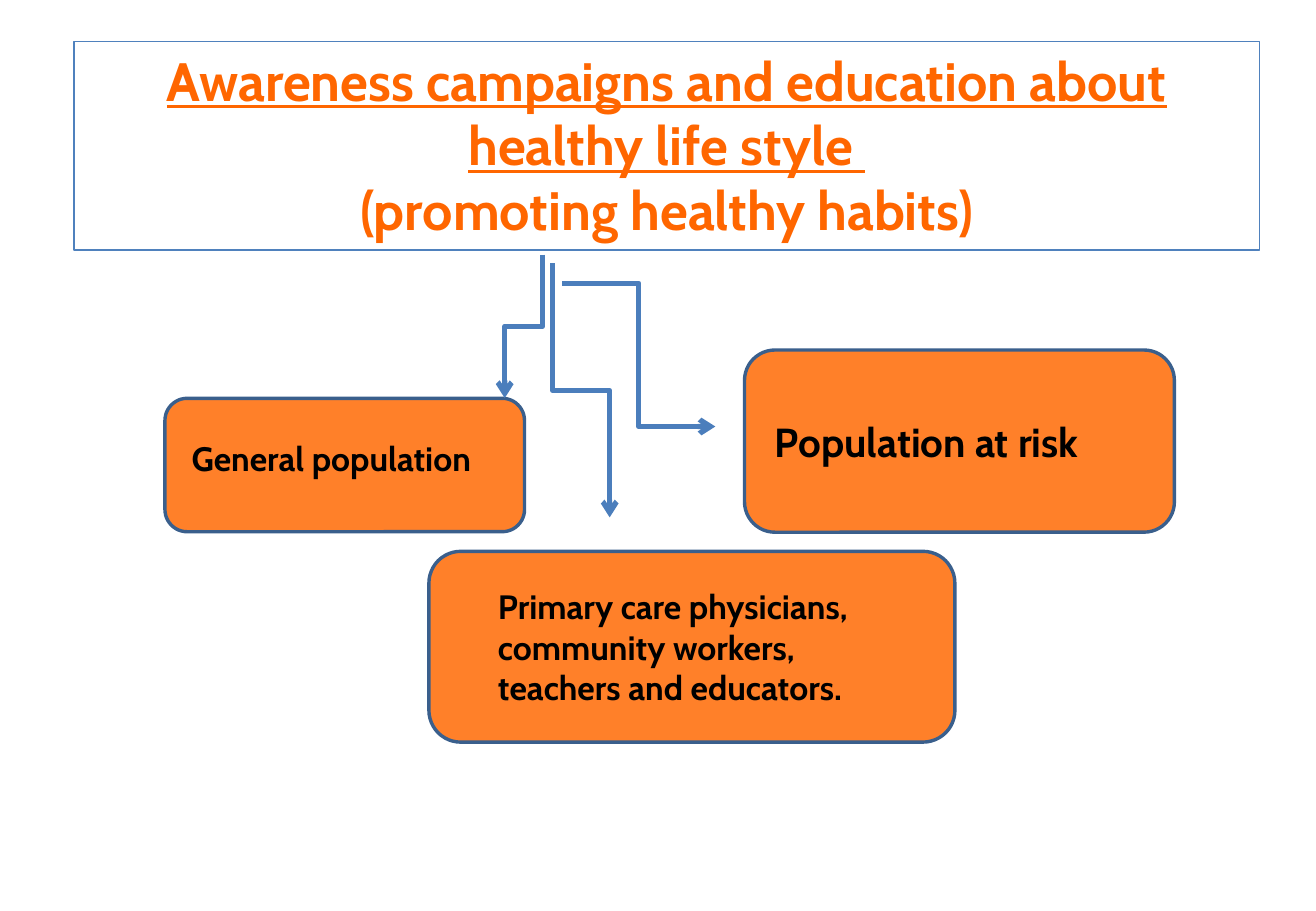
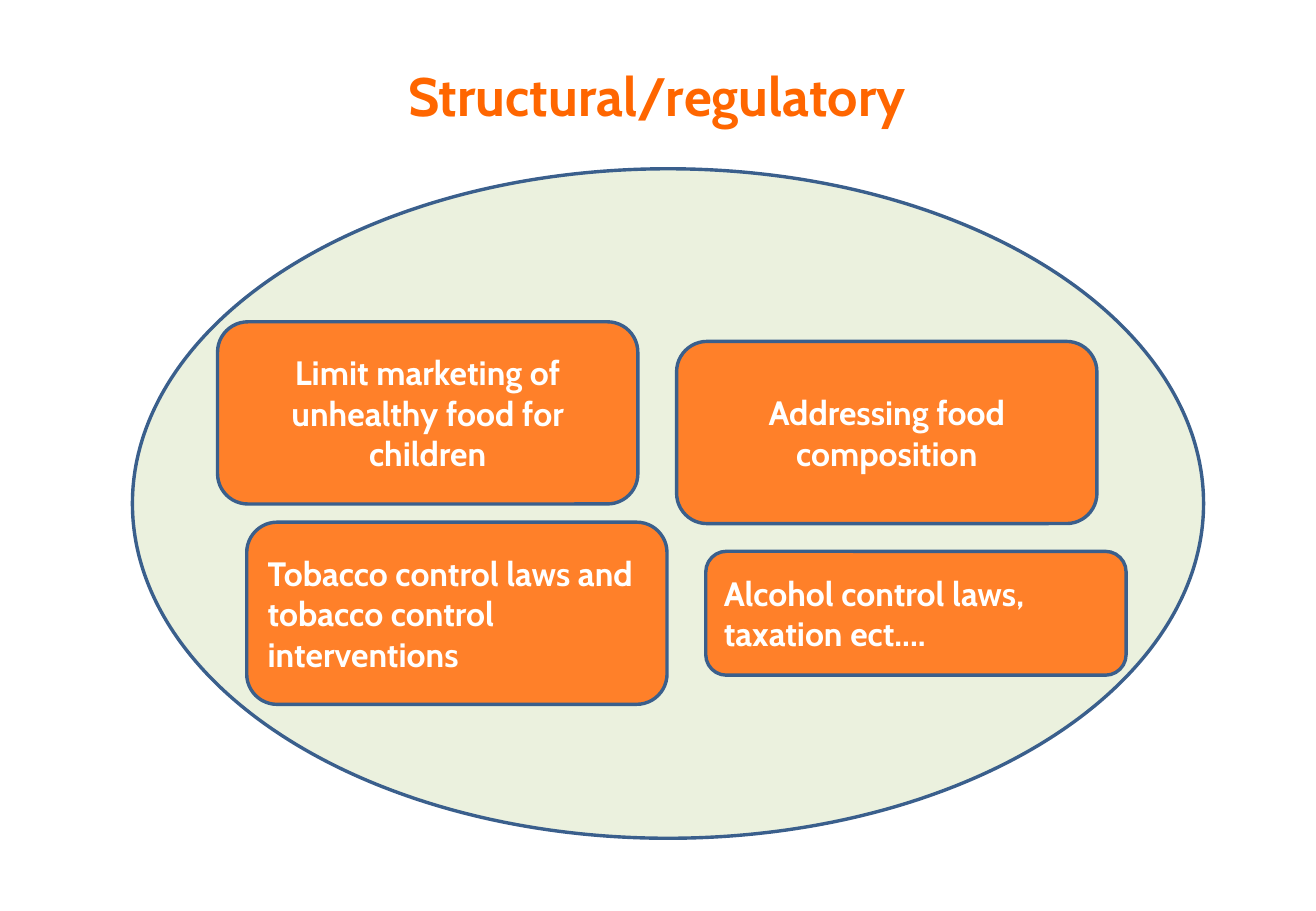
from lxml import etree
from pptx import Presentation
from pptx.dml.color import RGBColor
from pptx.enum.shapes import MSO_CONNECTOR, MSO_SHAPE
from pptx.enum.text import MSO_ANCHOR, MSO_AUTO_SIZE, PP_ALIGN
from pptx.oxml.ns import qn
from pptx.util import Cm, Pt

COLORS = {"title": "FF6600", "box": "FF8029", "edge": "3A5F8C", "frame": "4F81BD",
          "arrow": "4B7EBC", "oval": "EBF1DE", "white": "FFFFFF", "black": "000000"}
RGB = {name: RGBColor.from_string(value) for name, value in COLORS.items()}
LEFT, CENTER = PP_ALIGN.LEFT, PP_ALIGN.CENTER

prs = Presentation()
prs.slide_width, prs.slide_height = Cm(27.52), Cm(19.05)


def write(tf, lines, size, color, align):
    """Fill a text frame with one bold paragraph per line."""
    tf.word_wrap = True
    tf.auto_size = MSO_AUTO_SIZE.NONE
    font = {"name": "Cabin", "size": Pt(size), "bold": True}
    for i, line in enumerate(lines):
        p = tf.paragraphs[0] if i == 0 else tf.add_paragraph()
        p.alignment = align
        r = p.add_run()
        r.text = line
        for key, value in font.items():
            setattr(r.font, key, value)
        r.font.color.rgb = RGB[color]


def add_outlined(s, kind, at, fill):
    sp = s.shapes.add_shape(kind, *map(Cm, at))
    sp.shadow.inherit = False
    sp.fill.solid()
    sp.fill.fore_color.rgb = RGB[fill]
    sp.line.color.rgb = RGB["edge"]
    sp.line.width = Pt(2)
    return sp


# Slides and titles
titles = [
    ((1.55, 0.86, 24.79, 4.37),
     ["Awareness campaigns and education about healthy life style ",
      "(promoting healthy habits)"]),
    ((5.97, 1.19, 15.8, 1.63), ["Structural/regulatory "]),
]
slides = []
for at, lines in titles:
    s = prs.slides.add_slide(prs.slide_layouts[5])
    title = s.shapes.title
    title.left, title.top, title.width, title.height = map(Cm, at)
    title.fill.solid()
    title.fill.fore_color.rgb = RGB["white"]
    title.text_frame.vertical_anchor = MSO_ANCHOR.TOP
    write(title.text_frame, lines, 32, "title", CENTER)
    slides.append(s)
campaigns, regulatory = slides

frame = campaigns.shapes.title
frame.line.color.rgb = RGB["frame"]
frame.line.width = Pt(0.75)
frame.text_frame.paragraphs[0].runs[0].font.underline = True

# Ellipse behind the regulatory measures
add_outlined(regulatory, MSO_SHAPE.OVAL, (2.77, 3.53, 22.4, 14), "oval")

# Boxes: slide, place, lines, size, colour, alignment, left and bottom inset
boxes = [
    (campaigns, (3.45, 8.33, 7.52, 2.79), ["General population"],
     20, "black", LEFT, 0.42, 0.4),
    (campaigns, (8.97, 11.53, 11, 3.99),
     ["Primary care physicians,", "community workers,", "teachers and educators."],
     20, "black", LEFT, 1.25, 0.13),
    (campaigns, (15.57, 7.32, 8.99, 3.81), ["Population at risk"],
     24, "black", LEFT, 0.45, 0.13),
    (regulatory, (14.15, 7.14, 8.79, 3.81), ["Addressing food composition"],
     20, "white", CENTER, 0.25, 0.13),
    (regulatory, (4.55, 6.73, 8.79, 3.81),
     ["Limit marketing of unhealthy food for children"],
     20, "white", CENTER, 0.25, 0.13),
    (regulatory, (5.16, 10.92, 8.79, 3.81),
     ["Tobacco control laws and tobacco control interventions"],
     20, "white", LEFT, 0.25, 0.13),
    (regulatory, (14.76, 11.53, 8.79, 2.59), ["Alcohol control laws, taxation ect...."],
     20, "white", LEFT, 0.25, 0.13),
]
for s, at, lines, size, color, align, left, bottom in boxes:
    tf = add_outlined(s, MSO_SHAPE.ROUNDED_RECTANGLE, at, "box").text_frame
    tf.vertical_anchor = MSO_ANCHOR.MIDDLE
    tf.margin_left, tf.margin_bottom = Cm(left), Cm(bottom)
    write(tf, lines, size, color, align)

# Elbow arrows: ends before turning, then the turn in degrees
arrows = [
    ((9.45, 6.43, 12.45, 7.22), 90),
    ((14.81, 7.57, 9.5, 8.76), 270),
    ((11.76, 5.92, 14.96, 8.92), 0),
]
for ends, turn in arrows:
    cn = campaigns.shapes.add_connector(MSO_CONNECTOR.ELBOW, *map(Cm, ends))
    cn.line.color.rgb = RGB["arrow"]
    cn.line.width = Pt(3)
    spPr = cn._element.spPr
    if turn:
        spPr.find(qn("a:xfrm")).set("rot", str(turn * 60000))
    etree.SubElement(spPr.find(qn("a:ln")), qn("a:tailEnd"), type="arrow")
    etree.SubElement(spPr, qn("a:effectLst"))

prs.save("out.pptx")
